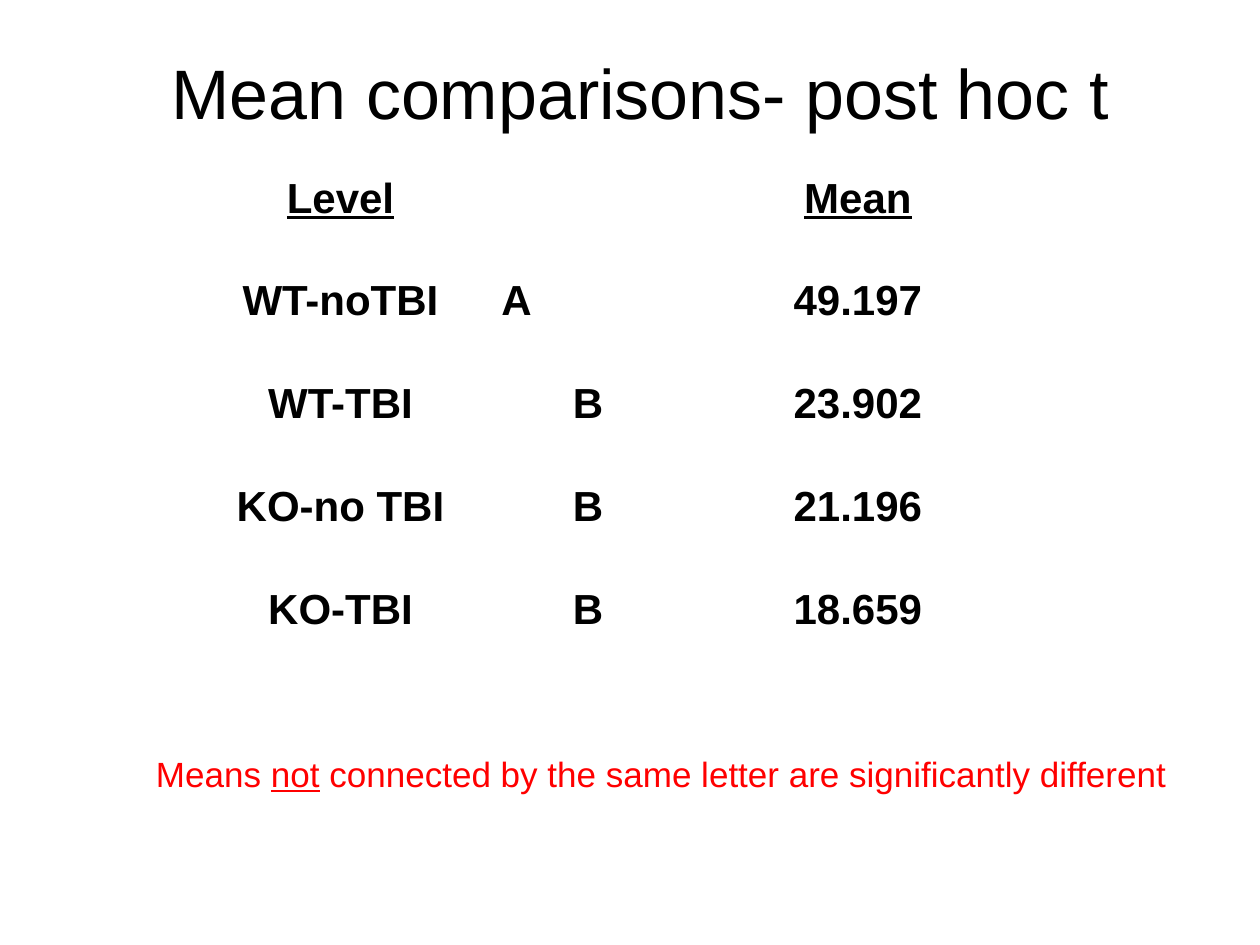
from pptx import Presentation
from pptx.dml.color import RGBColor
from pptx.enum.text import MSO_ANCHOR, PP_ALIGN
from pptx.util import Pt

PX = 914400 // 126
FONT = "Arial"
COLORS = {"text": "000000", "note": "FF0000"}

TITLE = "Mean comparisons- post hoc t"
ROWS = [
    ("Level", "", "", "", "Mean"),
    ("WT-noTBI", "A", "", "", "49.197"),
    ("WT-TBI", "", "B", "", "23.902"),
    ("KO-no TBI", "", "B", "", "21.196"),
    ("KO-TBI", "", "B", "", "18.659"),
]
NOTE = [
    ("Means ", False),
    ("not", True),
    (" connected by the same letter are significantly different", False),
]

TITLE_BOX = (73, 42, 1134, 98)
TABLE_LEFT, TABLE_TOP = 199, 168
COL_WIDTHS = (283, 69, 74, 52, 362)
ROW_HEIGHT = 103
NOTE_BOX = (126, 746, 1071, 55)
CELL_MARGIN = 4


def px(*values):
    return [v * PX for v in values]


def style(p, size, color, bold=False):
    p.alignment = PP_ALIGN.CENTER
    p.font.name = FONT
    p.font.size = Pt(size)
    p.font.bold = bold
    p.font.color.rgb = RGBColor.from_string(COLORS[color])


def add_title(slide):
    sp = slide.shapes.title
    sp.left, sp.top, sp.width, sp.height = px(*TITLE_BOX)
    tf = sp.text_frame
    tf.text = TITLE
    tf.vertical_anchor = MSO_ANCHOR.MIDDLE
    style(tf.paragraphs[0], 40, "text")


def add_means_table(slide):
    box = px(TABLE_LEFT, TABLE_TOP, sum(COL_WIDTHS), ROW_HEIGHT * len(ROWS))
    table = slide.shapes.add_table(len(ROWS), len(COL_WIDTHS), *box).table
    table.first_row = table.horz_banding = False
    for column, width in zip(table.columns, COL_WIDTHS):
        column.width = width * PX
    for i, row in enumerate(ROWS):
        table.rows[i].height = ROW_HEIGHT * PX
        for j, text in enumerate(row):
            cell = table.cell(i, j)
            cell.fill.background()
            cell.margin_left = cell.margin_right = CELL_MARGIN * PX
            cell.margin_top = cell.margin_bottom = 0
            if text:
                cell.text = text
                p = cell.text_frame.paragraphs[0]
                p.line_spacing = 1.15
                style(p, 24, "text", bold=True)
                p.font.underline = i == 0


def add_note(slide):
    tf = slide.shapes.add_textbox(*px(*NOTE_BOX)).text_frame
    tf.word_wrap = True
    p = tf.paragraphs[0]
    style(p, 20, "note")
    for text, underline in NOTE:
        r = p.add_run()
        r.text = text
        r.font.underline = underline


def main():
    prs = Presentation()
    prs.slide_width, prs.slide_height = px(1260, 945)
    slide = prs.slides.add_slide(prs.slide_layouts[5])
    add_title(slide)
    add_means_table(slide)
    add_note(slide)
    prs.save("out.pptx")


if __name__ == "__main__":
    main()
